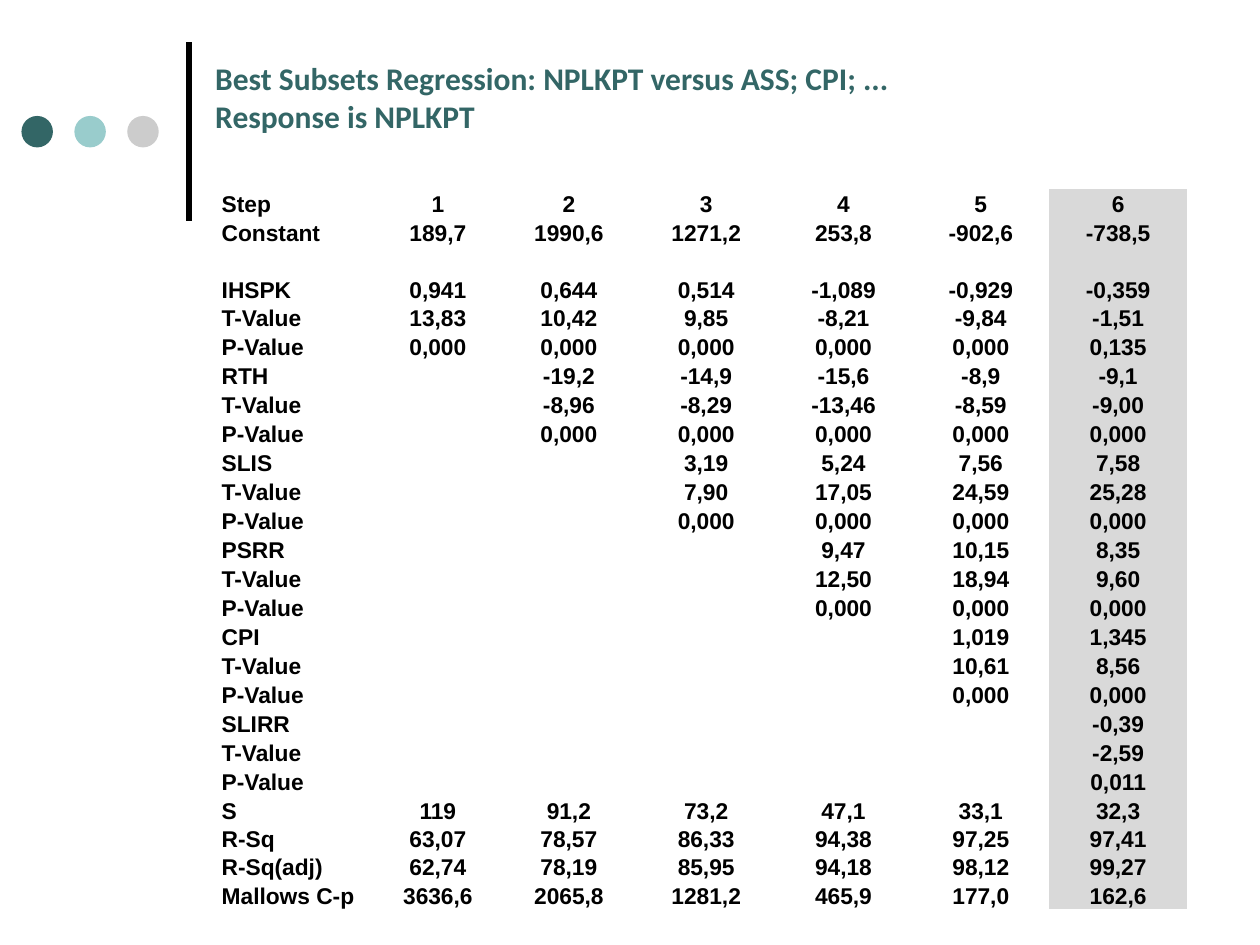
import pptx
import pptx.dml.color
import pptx.enum.shapes
import pptx.enum.text
import pptx.util
from lxml import etree

# The slide is a grid of 100 columns by 75 rows
SLIDE_WIDTH = pptx.util.Inches(10)
SLIDE_HEIGHT = pptx.util.Inches(7.5)
COLUMN = SLIDE_WIDTH / 100
ROW = SLIDE_HEIGHT / 75

TEAL, AQUA, SILVER = "336666", "99CCCC", "CCCCCC"
BLACK, HIGHLIGHT = "000000", "D9D9D9"
NO_GRID_STYLE = "{2D5ABB26-0587-4C30-8999-92F81FD0307C}"
TABLE_SIZE = 13

TITLE = ["Best Subsets Regression: NPLKPT versus ASS; CPI; ...", "Response is NPLKPT"]

# Label, then values ending at the last step; earlier steps stay empty
STEPS = [
    "Step|1|2|3|4|5|6",
    "Constant|189,7|1990,6|1271,2|253,8|-902,6|-738,5",
    "",
    "IHSPK|0,941|0,644|0,514|-1,089|-0,929|-0,359",
    "T-Value|13,83|10,42|9,85|-8,21|-9,84|-1,51",
    "P-Value|0,000|0,000|0,000|0,000|0,000|0,135",
    "RTH|-19,2|-14,9|-15,6|-8,9|-9,1",
    "T-Value|-8,96|-8,29|-13,46|-8,59|-9,00",
    "P-Value|0,000|0,000|0,000|0,000|0,000",
    "SLIS|3,19|5,24|7,56|7,58",
    "T-Value|7,90|17,05|24,59|25,28",
    "P-Value|0,000|0,000|0,000|0,000",
    "PSRR|9,47|10,15|8,35",
    "T-Value|12,50|18,94|9,60",
    "P-Value|0,000|0,000|0,000",
    "CPI|1,019|1,345",
    "T-Value|10,61|8,56",
    "P-Value|0,000|0,000",
    "SLIRR|-0,39",
    "T-Value|-2,59",
    "P-Value|0,011",
    "S|119|91,2|73,2|47,1|33,1|32,3",
    "R-Sq|63,07|78,57|86,33|94,38|97,25|97,41",
    "R-Sq(adj)|62,74|78,19|85,95|94,18|98,12|99,27",
    "Mallows C-p|3636,6|2065,8|1281,2|465,9|177,0|162,6",
]


def rgb(color):
    return pptx.dml.color.RGBColor.from_string(color)


def place(left, top, width, height):
    """Turn grid columns and rows into slide lengths."""
    return [round(n * unit) for n, unit in
            ((left, COLUMN), (top, ROW), (width, COLUMN), (height, ROW))]


def write(frame, lines, size, font, color, align=None):
    """Write bold lines, one paragraph each."""
    for index, line in enumerate(lines):
        paragraph = frame.add_paragraph() if index else frame.paragraphs[0]
        paragraph.alignment = align
        run = paragraph.add_run()
        run.text = line
        run.font.size = pptx.util.Pt(size)
        run.font.name = font
        run.font.bold = True
        run.font.color.rgb = rgb(color)


def add_rule(slide, box):
    left, top, width, height = place(*box)
    rule = slide.shapes.add_connector(
        pptx.enum.shapes.MSO_CONNECTOR.STRAIGHT, left, top + height, left + width, top)
    rule.line.color.rgb = rgb(BLACK)
    rule.line.width = pptx.util.Pt(3)
    etree.SubElement(rule._element.spPr, pptx.oxml.ns.qn("a:effectLst"))


def add_dots(slide, box):
    """Spread round dots evenly across the box."""
    left, top, width, diameter = box
    colors = [TEAL, AQUA, SILVER]
    pitch = (width - diameter) / (len(colors) - 1)
    for index, color in enumerate(colors):
        dot = slide.shapes.add_shape(
            pptx.enum.shapes.MSO_SHAPE.OVAL,
            *place(left + index * pitch, top, diameter, diameter))
        dot.shadow.inherit = False
        dot.fill.solid()
        dot.fill.fore_color.rgb = rgb(color)
        dot.line.fill.background()


def add_title(slide, box):
    frame = slide.shapes.add_textbox(*place(*box)).text_frame
    frame.word_wrap = True
    write(frame, TITLE, size=18, font="Calibri", color=TEAL)


def fill_cell(cell, text, is_label, is_chosen):
    cell.margin_left = cell.margin_right = cell.margin_top = pptx.util.Inches(0.01)
    cell.margin_bottom = 0
    cell.vertical_anchor = pptx.enum.text.MSO_ANCHOR.BOTTOM
    if is_chosen:
        cell.fill.solid()
        cell.fill.fore_color.rgb = rgb(HIGHLIGHT)
    else:
        cell.fill.background()
    if text:
        align = pptx.enum.text.PP_ALIGN
        write(cell.text_frame, [text], size=TABLE_SIZE, font="Arial", color=BLACK,
              align=align.LEFT if is_label else align.CENTER)
    else:
        # An empty cell keeps its row low only at the table's text size
        end = etree.SubElement(cell.text_frame.paragraphs[0]._p,
                               pptx.oxml.ns.qn("a:endParaRPr"))
        end.set("sz", str(TABLE_SIZE * 100))


def add_steps_table(slide, box):
    widths = [12.3, 9.9] + [10.9] * 5
    frame = slide.shapes.add_table(len(STEPS), len(widths), *place(*box))
    table = frame.table
    table.first_row = table.horz_banding = False
    table._tbl.tblPr.find(pptx.oxml.ns.qn("a:tableStyleId")).text = NO_GRID_STYLE
    for column, width in zip(table.columns, widths):
        column.width = round(width * COLUMN)
    last = len(widths) - 1
    for row, line in zip(table.rows, STEPS):
        row.height = round(box[3] * ROW / len(STEPS))
        label, *values = line.split("|")
        texts = [label] + [""] * (last - len(values)) + values
        for index, (cell, text) in enumerate(zip(row.cells, texts)):
            fill_cell(cell, text, is_label=index == 0, is_chosen=index == last)


def main():
    deck = pptx.Presentation()
    deck.slide_width, deck.slide_height = SLIDE_WIDTH, SLIDE_HEIGHT
    slide = deck.slides.add_slide(deck.slide_layouts[6])
    add_rule(slide, (15, 3.3, 0, 14.2))
    add_dots(slide, (1.7, 9.2, 10.9, 2.5))
    add_steps_table(slide, (17.5, 15, 76.7, 56.4))
    add_title(slide, (16.1, 4.2, 74.2, 7))
    deck.save("out.pptx")


if __name__ == "__main__":
    main()
